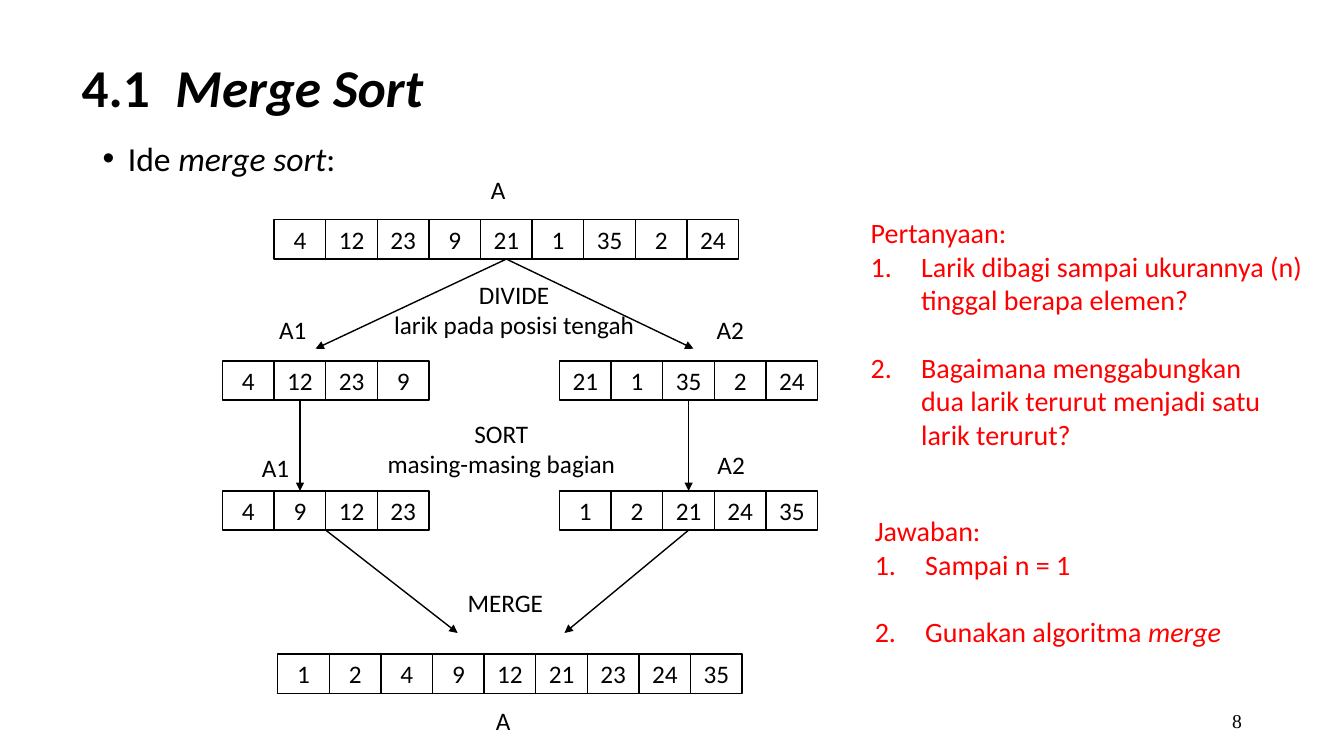
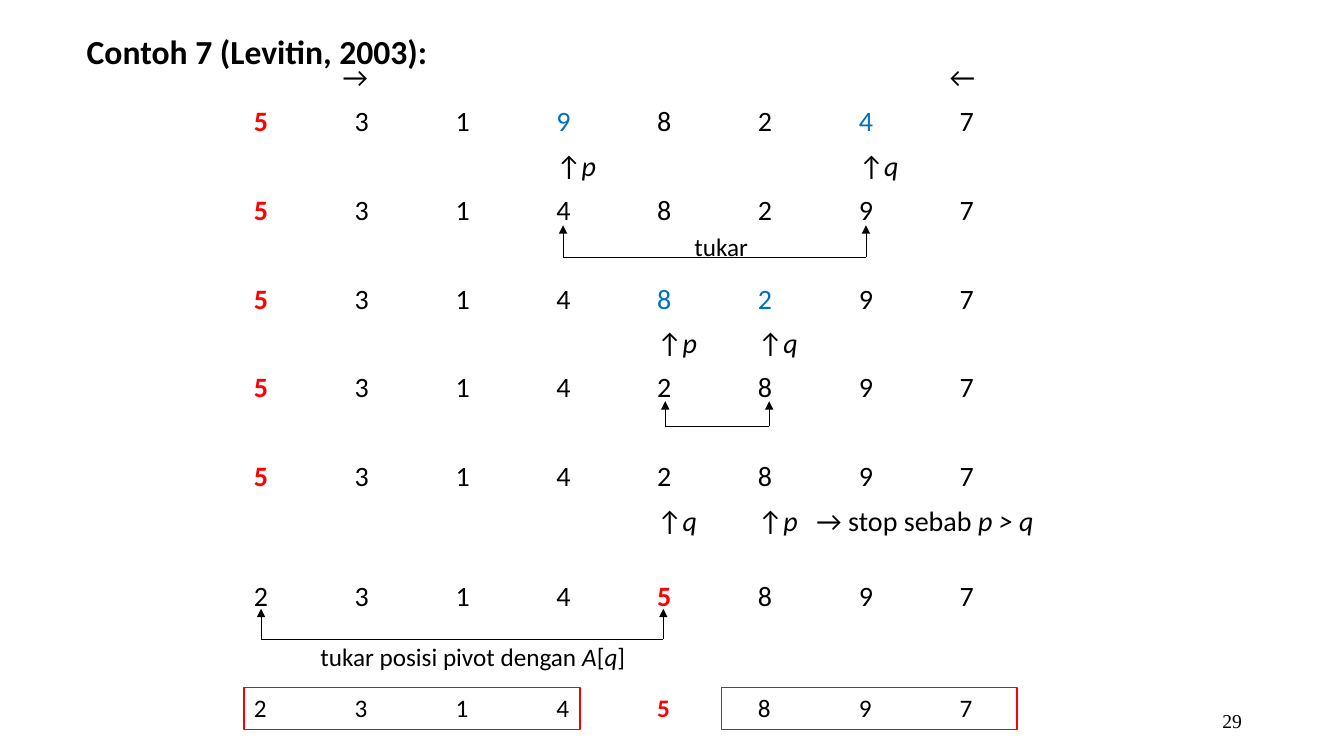
"""Build two lecture slides on merge sort and on partitioning around a pivot."""
from lxml.etree import SubElement
from pptx import Presentation
from pptx.dml.color import RGBColor
from pptx.enum.shapes import MSO_CONNECTOR, MSO_SHAPE
from pptx.enum.text import MSO_ANCHOR, MSO_AUTO_SIZE, PP_ALIGN
from pptx.oxml.ns import qn
from pptx.util import Inches, Pt

BLACK = RGBColor(0x00, 0x00, 0x00)
RED = RGBColor(0xFF, 0x00, 0x00)
BLUE = RGBColor(0x00, 0x70, 0xC0)
BODY_FONT = "Calibri"
NUMBER_FONT = "Times New Roman"

presentation = Presentation()
presentation.slide_width = Inches(13.33)
presentation.slide_height = Inches(7.5)
PERCENT_X = presentation.slide_width / 100
PERCENT_Y = presentation.slide_height / 100
TITLE_ONLY = presentation.slide_layouts[5]


def add_text(slide, paragraphs, box, shape=None, size=18, color=BLACK, font=BODY_FONT,
             bold=False, align=PP_ALIGN.LEFT, anchor=MSO_ANCHOR.TOP, spacing=1.0,
             gaps=None, tabs=None, bullets=None, indent=0.5):
    """Write paragraphs of plain or (text, style) runs in a box given in percent of the slide."""
    shape = shape or slide.shapes.add_textbox(0, 0, 0, 0)
    left, top, width, height = box
    shape.left, shape.width = round(left * PERCENT_X), round(width * PERCENT_X)
    shape.top, shape.height = round(top * PERCENT_Y), round(height * PERCENT_Y)
    frame = shape.text_frame
    frame.word_wrap = True
    frame.auto_size = MSO_AUTO_SIZE.NONE
    frame.vertical_anchor = anchor
    for index, runs in enumerate(paragraphs):
        paragraph = frame.add_paragraph() if index else frame.paragraphs[0]
        properties = paragraph._p.get_or_add_pPr()
        if bullets and bullets[index]:
            properties.set("marL", str(Inches(indent)))
            properties.set("indent", str(-Inches(indent)))
            if bullets[index] == "1.":
                SubElement(properties, qn("a:buAutoNum"), type="arabicPeriod")
            else:
                SubElement(properties, qn("a:buFont"), typeface="Arial")
                SubElement(properties, qn("a:buChar"), char=bullets[index])
        if tabs:
            stops = SubElement(properties, qn("a:tabLst"))
            for stop in tabs[index]:
                SubElement(stops, qn("a:tab"), pos=str(Inches(stop)), algn="l")
        paragraph.alignment = align
        paragraph.line_spacing = spacing
        paragraph.space_before = Pt(gaps[index] if gaps else 0)
        for item in runs:
            text, style = (item, "") if isinstance(item, str) else item
            if text == "\n":
                paragraph.add_line_break()
                continue
            run = paragraph.add_run()
            run.text = text
            run.font.name = font
            run.font.size = Pt(size)
            run.font.bold = bold or style == "pivot"
            run.font.italic = style == "italic"
            run.font.color.rgb = {"pivot": RED, "swap": BLUE}.get(style, color)
    return shape


def add_line(slide, start, end, width=1.0, arrow=True):
    """Draw a line between two points given in percent of the slide."""
    line = slide.shapes.add_connector(
        MSO_CONNECTOR.STRAIGHT,
        round(start[0] * PERCENT_X), round(start[1] * PERCENT_Y),
        round(end[0] * PERCENT_X), round(end[1] * PERCENT_Y))
    line.line.color.rgb = BLACK
    line.line.width = Pt(width)
    if arrow:
        SubElement(line.line._get_or_add_ln(), qn("a:tailEnd"), type="triangle")
    SubElement(line._element.spPr, qn("a:effectLst"))
    return line


merge_slide = presentation.slides.add_slide(TITLE_ONLY)
partition_slide = presentation.slides.add_slide(TITLE_ONLY)
for slide, number in ((merge_slide, "8"), (partition_slide, "29")):
    add_text(slide, [[number]], (70.65, 92.67, 22.5, 5.33), size=14, font=NUMBER_FONT,
             align=PP_ALIGN.RIGHT, anchor=MSO_ANCHOR.MIDDLE)

add_text(merge_slide, [["4.1\t", ("Merge Sort", "italic")]], (5.33, 6.93, 63.75, 10),
         shape=merge_slide.shapes.title, size=38, bold=True, spacing=0.9,
         anchor=MSO_ANCHOR.MIDDLE, tabs=[[0.93]])
add_text(merge_slide, [["Ide ", ("merge sort", "italic"), ":"]], (6.9, 18.13, 63.75, 6.67),
         size=24, spacing=0.9, bullets=["•"], indent=0.25)

GRID_LEFT, CELL_WIDTH, CELL_HEIGHT = 16.56, 3.84, 5.2
arrays = {
    "input": (1, 29.07, [4, 12, 23, 9, 21, 1, 35, 2, 24]),
    "left": (0, 47.73, [4, 12, 23, 9]),
    "right": (6.53, 47.73, [21, 1, 35, 2, 24]),
    "left sorted": (0, 64.93, [4, 9, 12, 23]),
    "right sorted": (6.53, 64.93, [1, 2, 21, 24, 35]),
    "merged": (1.07, 86.53, [1, 2, 4, 9, 12, 21, 23, 24, 35]),
}
cells = {}
for name, (column, top, values) in arrays.items():
    for index, value in enumerate(values):
        cell = merge_slide.shapes.add_shape(MSO_SHAPE.RECTANGLE, 0, 0, 0, 0)
        cell.shadow.inherit = False
        cell.fill.background()
        cell.line.color.rgb = BLACK
        cell.line.width = Pt(1)
        cell.text_frame.margin_left = cell.text_frame.margin_right = 0
        box = (GRID_LEFT + (column + index) * CELL_WIDTH, top, CELL_WIDTH, CELL_HEIGHT)
        add_text(merge_slide, [[str(value)]], box, shape=cell,
                 align=PP_ALIGN.CENTER, anchor=MSO_ANCHOR.MIDDLE)
        cells[name, index] = cell

for first, last, target in (
    (("input", 4), None, (23.48, 46.13)),
    (("input", 4), None, (51.6, 46.13)),
    (("left", 1), ("left sorted", 1), (22.32, 64.93)),
    (("right", 2), ("right sorted", 2), (51.3, 64.93)),
    (None, None, (34.05, 83.73)),
    (("right sorted", 2), None, (42, 83.73)),
):
    arrow = add_line(merge_slide, (GRID_LEFT + 2 * CELL_WIDTH, 70.13), target)
    if first:
        arrow.begin_connect(cells[first], 2)
    if last:
        arrow.end_connect(cells[last], 0)

for label, left, top in (
    ("A", 35.78, 22.4), ("A1", 20.03, 40.93), ("A2", 52.58, 40.93), ("A1", 18.75, 59.2),
    ("A2", 52.65, 58.8), ("MERGE", 34.05, 77.07), ("A", 36.15, 92.67),
):
    add_text(merge_slide, [[label]], (left, top, 10, 5.33))
for lines, left, top in (
    ([["DIVIDE"], ["larik pada posisi tengah"]], 27.25, 36.27),
    ([["SORT"], ["masing-masing bagian"]], 26.3, 54.67),
):
    add_text(merge_slide, lines, (left, top, 22, 9.47), align=PP_ALIGN.CENTER)

questions = [
    ["Pertanyaan:"],
    ["Larik dibagi sampai ukurannya (n)", "\n", "tinggal berapa elemen?"],
    ["Bagaimana menggabungkan", "\n", "dua larik terurut menjadi satu", "\n", "larik terurut?"],
]
answers = [["Jawaban:"], ["Sampai n = 1"], ["Gunakan algoritma ", ("merge", "italic")]]
for paragraphs, box in (
    (questions, (64.05, 27.87, 35, 32.8)),
    (answers, (64.35, 67.33, 27.5, 19.33)),
):
    add_text(merge_slide, paragraphs, box, size=20, color=RED,
             gaps=[0, 0, 24], bullets=[None, "1.", "1."])

add_text(partition_slide, [["Contoh 7 (Levitin, 2003):"]], (5.7, 3.47, 50, 6.67),
         shape=partition_slide.shapes.title, size=24, bold=True)

COLUMNS = list(range(1, 8))
PIVOT = ("5", "pivot")
P, Q = ("p", "italic"), ("q", "italic")
steps = [
    (0, [0.88, 6.9], ["\t→\t←"]),
    (10, COLUMNS, [PIVOT, "\t3\t1\t", ("9", "swap"), "\t8\t2\t", ("4", "swap"), "\t7"]),
    (10, COLUMNS, ["\t\t\t↑", P, "\t\t\t↑", Q]),
    (10, COLUMNS, [PIVOT, "\t3\t1\t4\t8\t2\t9\t7"]),
    (42, COLUMNS, [PIVOT, "\t3\t1\t4\t", ("8\t2", "swap"), "\t9\t7"]),
    (10, COLUMNS, ["\t\t\t\t↑", P, "\t↑", Q]),
    (10, COLUMNS, [PIVOT, "\t3\t1\t4\t2\t8\t9\t7"]),
    (42, COLUMNS, [PIVOT, "\t3\t1\t4\t2\t8\t9\t7"]),
    (10, [4, 5, 5.58], ["\t↑", Q, "\t↑", P, "\t→ stop sebab ", ("p > q", "italic")]),
    (32, COLUMNS, ["2\t3\t1\t4\t", PIVOT, "\t8\t9\t7"]),
]
gaps, tabs, rows = zip(*steps)
add_text(partition_slide, rows, (18.15, 7.73, 63.75, 76), size=20, spacing=0.9,
         gaps=gaps, tabs=tabs)
add_text(partition_slide, [rows[-1]], (18.15, 90.93, 57.53, 5.33), tabs=[COLUMNS])

for left, right, tip, base in (
    (41.9, 64.43, 29.8, 34),
    (49.5, 57.23, 53.07, 56.4),
    (19.43, 49.35, 80.53, 84.53),
):
    add_line(partition_slide, (left, base), (right, base), width=0.5, arrow=False)
    for side in (left, right):
        add_line(partition_slide, (side, base), (side, tip), width=0.5)

add_text(partition_slide, [["tukar"]], (50.93, 30, 10, 5.33))
add_text(partition_slide,
         [["tukar posisi pivot dengan ", ("A", "italic"), "[", Q, "]"]],
         (23.1, 84.13, 30, 5.33))

for left, width in ((18.15, 25), (53.7, 21.98)):
    part = partition_slide.shapes.add_shape(
        MSO_SHAPE.RECTANGLE, round(left * PERCENT_X), round(90.93 * PERCENT_Y),
        round(width * PERCENT_X), round(5.6 * PERCENT_Y))
    part.shadow.inherit = False
    part.fill.background()
    part.line.color.rgb = RED
    part.line.width = Pt(1)

presentation.save("out.pptx")
